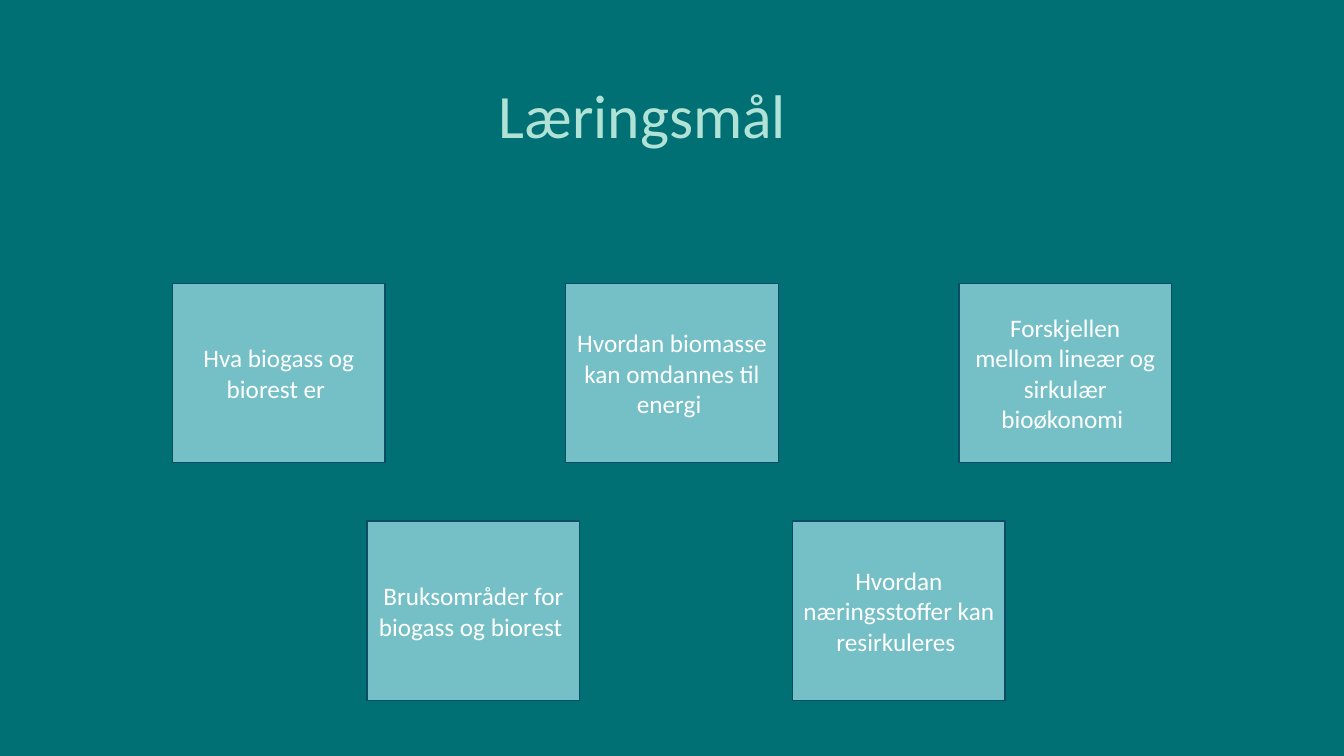
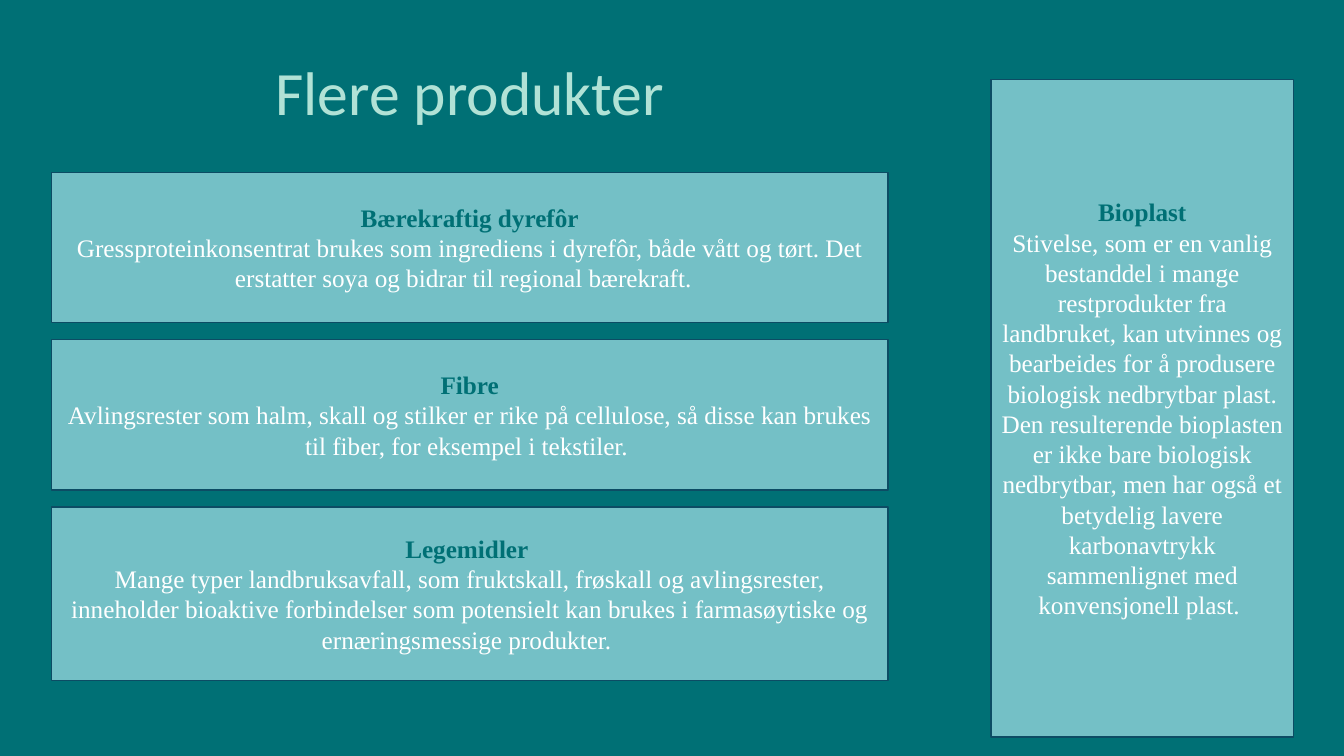
from pptx import Presentation
from pptx.dml.color import RGBColor
from pptx.enum.shapes import MSO_SHAPE
from pptx.enum.text import MSO_ANCHOR, MSO_AUTO_SIZE, PP_ALIGN
from pptx.util import Inches, Pt

TEAL, PANEL, EDGE, MINT, WHITE = "007075", "74C0C6", "0C4C64", "B1E2D6", "FFFFFF"
SANS, SERIF = "Calibri", "Times New Roman"

GOAL_ROWS = [
    ["Hva biogass og biorest er ",
     "Hvordan biomasse kan omdannes til energi ",
     "Forskjellen mellom lineær og sirkulær bioøkonomi "],
    ["Bruksområder for biogass og biorest ",
     "Hvordan næringsstoffer kan resirkuleres "],
]
PRODUCTS = [
    ("Bærekraftig dyrefôr",
     "Gressproteinkonsentrat brukes som ingrediens i dyrefôr, både vått og tørt. "
     "Det erstatter soya og bidrar til regional bærekraft.  ", 1.49),
    ("Fibre",
     "Avlingsrester som halm, skall og stilker er rike på cellulose, så disse kan "
     "brukes til fiber, for eksempel i tekstiler. ", 1.49),
    ("Legemidler ",
     "Mange typer landbruksavfall, som fruktskall, frøskall og avlingsrester, "
     "inneholder bioaktive forbindelser som potensielt kan brukes i farmasøytiske "
     "og ernæringsmessige produkter. ", 1.72),
]
BIOPLAST = (
    "Bioplast",
    "Stivelse, som er en vanlig bestanddel i mange restprodukter fra landbruket, kan "
    "utvinnes og bearbeides for å produsere biologisk nedbrytbar plast. Den "
    "resulterende bioplasten er ikke bare biologisk nedbrytbar, men har også et "
    "betydelig lavere karbonavtrykk sammenlignet med konvensjonell plast. ",
)


def rgb(value):
    """Turn a hex string into a colour."""
    return RGBColor.from_string(value)


def style(p, size, font, color, bold=False, align=PP_ALIGN.CENTER):
    """Align a paragraph and format its runs."""
    p.alignment = align
    for r in p.runs:
        r.font.size, r.font.name, r.font.bold = Pt(size), font, bold
        r.font.color.rgb = rgb(color)


def new_slide(prs):
    """Add a blank slide with the shared background."""
    s = prs.slides.add_slide(prs.slide_layouts[6])
    s.background.fill.solid()
    s.background.fill.fore_color.rgb = rgb(TEAL)
    return s


def add_title(s, x, y, text, align):
    """Place a slide title with its top left corner at x, y."""
    tf = s.shapes.add_textbox(Inches(x), Inches(y), Inches(5.24), Inches(0.84)).text_frame
    tf.word_wrap = True
    tf.auto_size = MSO_AUTO_SIZE.SHAPE_TO_FIT_TEXT
    tf.text = text
    style(tf.paragraphs[0], 44, SANS, MINT, align=align)


def add_panel(s, box, body, font, heading=None):
    """Fill a box with centred text under an optional bold heading."""
    sp = s.shapes.add_shape(MSO_SHAPE.RECTANGLE, *map(Inches, box))
    sp.shadow.inherit = False
    sp.fill.solid()
    sp.fill.fore_color.rgb = rgb(PANEL)
    sp.line.color.rgb = rgb(EDGE)
    sp.line.width = Pt(1)
    tf = sp.text_frame
    tf.word_wrap = True
    tf.vertical_anchor = MSO_ANCHOR.MIDDLE
    p = tf.paragraphs[0]
    if heading:
        p.text = heading
        style(p, 18, font, TEAL, bold=True)
        p = tf.add_paragraph()
    p.text = body
    style(p, 18, font, WHITE)


def add_card_row(s, x, y, pitch, texts):
    """Lay equal cards from x, y at a fixed column pitch."""
    for col, text in enumerate(texts):
        add_panel(s, (x + col * pitch, y, 2.11, 1.78), text, SANS)


def add_stack(s, x, y, w, gap, items):
    """Stack headed panels downwards from x, y with equal gaps."""
    for heading, body, h in items:
        add_panel(s, (x, y, w, h), body, SERIF, heading)
        y += h + gap


def goals_slide(prs):
    """Build the slide of learning goals."""
    s = new_slide(prs)
    add_card_row(s, 1.71, 2.81, 3.9, GOAL_ROWS[0])
    add_card_row(s, 3.64, 5.17, 4.22, GOAL_ROWS[1])
    add_title(s, 4.85, 0.71, "Læringsmål", PP_ALIGN.LEFT)


def products_slide(prs):
    """Build the slide of further products."""
    s = new_slide(prs)
    add_title(s, 2.04, 0.49, "Flere produkter", PP_ALIGN.CENTER)
    add_stack(s, 0.51, 1.71, 8.3, 0.17, PRODUCTS)
    heading, body = BIOPLAST
    add_panel(s, (9.83, 0.79, 3, 6.52), body, SERIF, heading)


def main():
    """Build and save the presentation."""
    prs = Presentation()
    prs.slide_width, prs.slide_height = Inches(13.33), Inches(7.5)
    goals_slide(prs)
    products_slide(prs)
    prs.save("out.pptx")


if __name__ == "__main__":
    main()
